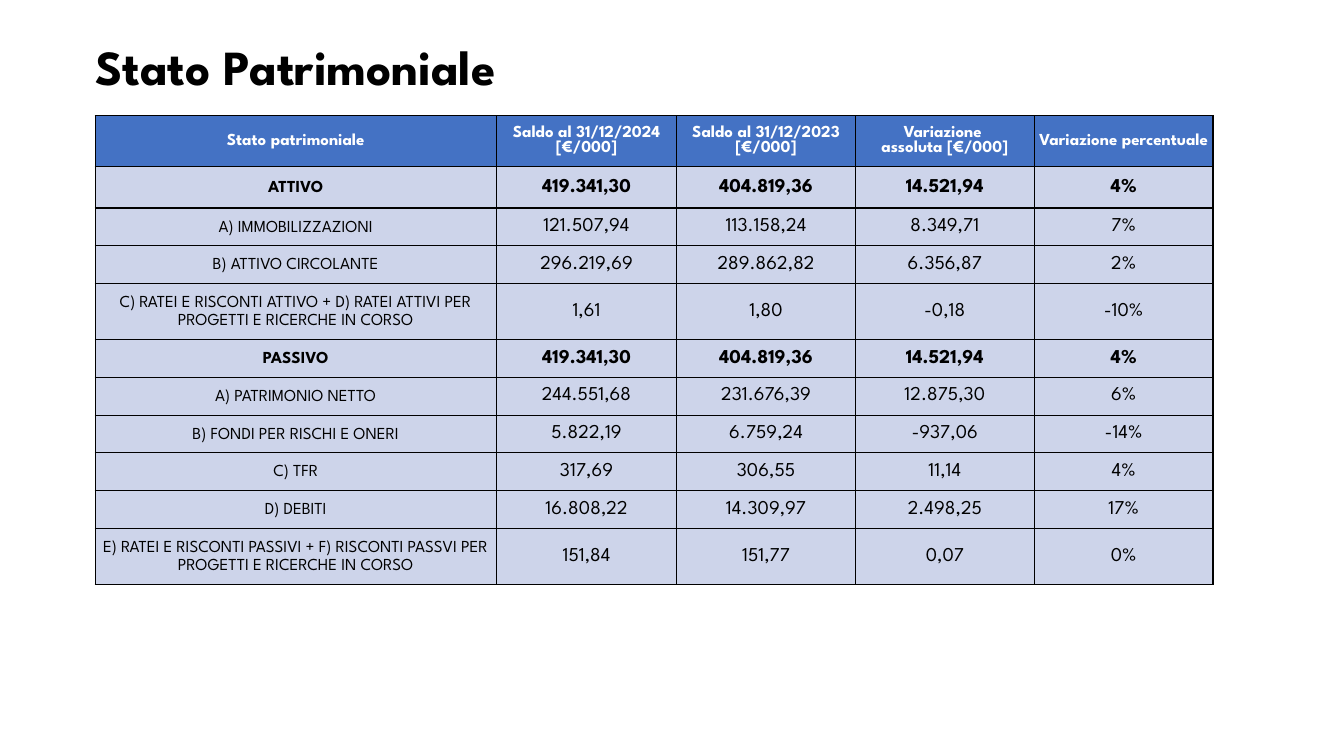
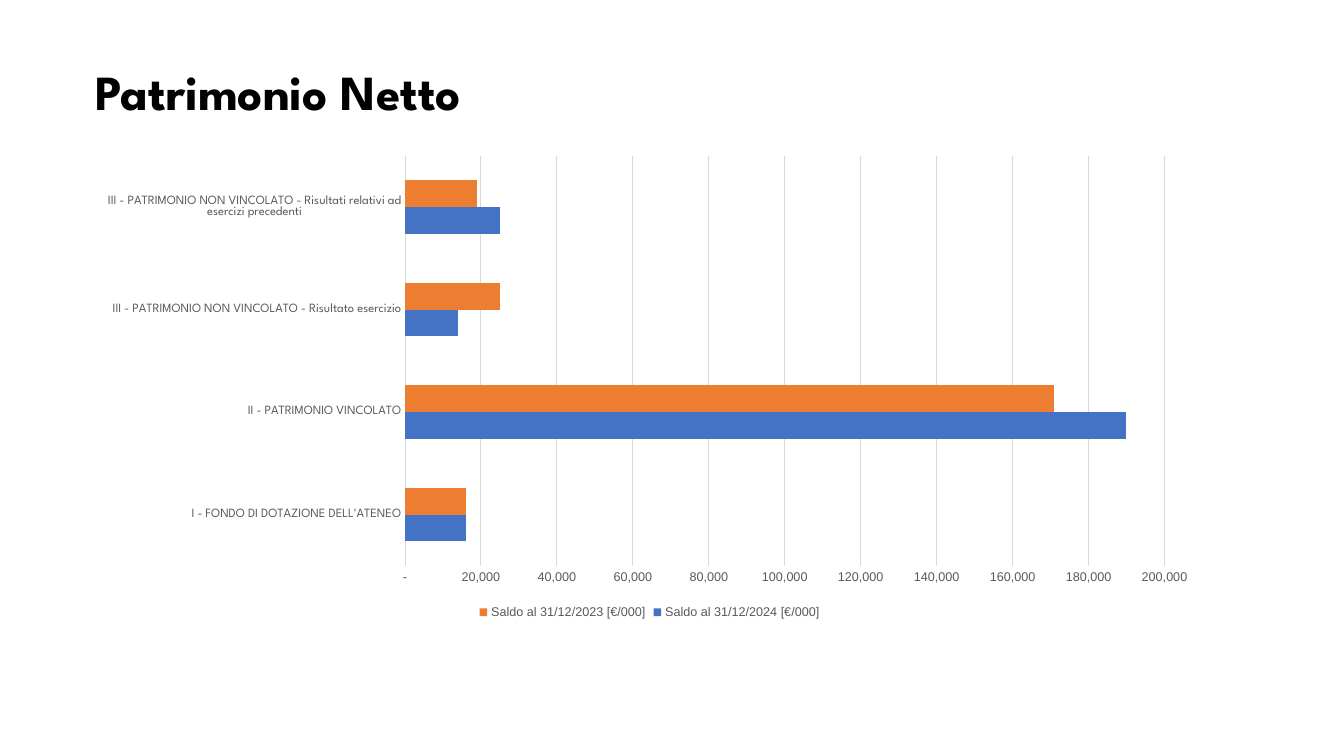
"""Build two balance sheet slides: a summary table and a bar chart of net assets."""
import dataclasses

import lxml.etree
import pptx
import pptx.chart.data
import pptx.dml.color
import pptx.enum.chart
import pptx.enum.text
import pptx.oxml.ns
import pptx.util

Pt = pptx.util.Pt
qn = pptx.oxml.ns.qn


@dataclasses.dataclass(frozen=True)
class Theme:
    """Colours, fonts and type sizes shared by the slides."""
    black: str = "000000"
    white: str = "FFFFFF"
    blue: str = "4472C4"
    pale_blue: str = "CDD4EA"
    orange: str = "ED7D31"
    grid: str = "D9D9D9"
    axis_text: str = "595959"
    display_font: str = "League Spartan"
    chart_font: str = "Arial"
    title_size: float = 35
    label_size: float = 12
    value_size: float = 14
    chart_size: float = 10
    axis_size: float = 9
    line_width: float = 0.75
    border_width: float = 0.94


THEME = Theme()

COLUMN_WIDTHS = [286.5, 129, 127.5, 128, 127.5]
HEADER_HEIGHT, FIRST_HEIGHT, ROW_HEIGHT, TALL_HEIGHT = 36.5, 29.5, 27, 40
HEADERS = [
    ["Stato patrimoniale"],
    ["Saldo al 31/12/2024 [€/000]"],
    ["Saldo al 31/12/2023 [€/000]"],
    ["Variazione ", "assoluta [€/000]"],
    ["Variazione percentuale"],
]
TOTALS = ("ATTIVO", "PASSIVO")
ROWS = [
    ("ATTIVO", "419.341,30", "404.819,36", "14.521,94", "4%"),
    ("A) IMMOBILIZZAZIONI", "121.507,94", "113.158,24", "8.349,71", "7%"),
    ("B) ATTIVO CIRCOLANTE", "296.219,69", "289.862,82", "6.356,87", "2%"),
    ("C) RATEI E RISCONTI ATTIVO + D) RATEI ATTIVI PER PROGETTI E RICERCHE IN CORSO",
     "1,61", "1,80", "-0,18", "-10%"),
    ("PASSIVO", "419.341,30", "404.819,36", "14.521,94", "4%"),
    ("A) PATRIMONIO NETTO", "244.551,68", "231.676,39", "12.875,30", "6%"),
    ("B) FONDI PER RISCHI E ONERI", "5.822,19", "6.759,24", "-937,06", "-14%"),
    ("C) TFR", "317,69", "306,55", "11,14", "4%"),
    ("D) DEBITI", "16.808,22", "14.309,97", "2.498,25", "17%"),
    ("E) RATEI E RISCONTI PASSIVI + F) RISCONTI PASSVI PER PROGETTI E RICERCHE IN CORSO",
     "151,84", "151,77", "0,07", "0%"),
]

CATEGORIES = [
    "I - FONDO DI DOTAZIONE DELL'ATENEO",
    "II - PATRIMONIO VINCOLATO",
    "III - PATRIMONIO NON VINCOLATO - Risultato esercizio",
    "III - PATRIMONIO NON VINCOLATO - Risultati relativi ad esercizi precedenti",
]
SERIES = [
    ("Saldo al 31/12/2024 [€/000]", (16000, 190000, 14000, 25000), THEME.blue),
    ("Saldo al 31/12/2023 [€/000]", (16000, 171000, 25000, 19000), THEME.orange),
]
NUMBER_FORMAT = r'_(* #,##0_);_(* \(#,##0\);_(* "-"_);_(@_)'
CHART_WIDTH, CHART_HEIGHT = 806, 340.5
PLOT_LAYOUT = {
    "x": 228.3 / CHART_WIDTH,
    "y": 6.4 / CHART_HEIGHT,
    "w": 542.5 / CHART_WIDTH,
    "h": 292.8 / CHART_HEIGHT,
}


def rgb(code):
    """Return the colour object for a hexadecimal code."""
    return pptx.dml.color.RGBColor.from_string(code)


def style_font(font, size, color, name=THEME.display_font, bold=False):
    """Set the face, size, colour and weight of a font."""
    font.name, font.size, font.bold = name, Pt(size), bold
    font.color.rgb = rgb(color)


def add_title(page, text, top):
    """Add the slide title at a given height."""
    box = page.shapes.add_textbox(Pt(61), Pt(top), Pt(839), Pt(78.5))
    box.text_frame.word_wrap = True
    para = box.text_frame.paragraphs[0]
    para.line_spacing = 0.9
    span = para.add_run()
    span.text = text
    style_font(span.font, THEME.title_size, THEME.black, bold=True)


def add_borders(cell):
    """Draw a thin black line on all four sides of a cell."""
    properties = cell._tc.get_or_add_tcPr()
    for side in ("a:lnL", "a:lnR", "a:lnT", "a:lnB"):
        line = lxml.etree.SubElement(properties, qn(side), w=str(int(Pt(THEME.border_width))))
        fill = lxml.etree.SubElement(line, qn("a:solidFill"))
        lxml.etree.SubElement(fill, qn("a:srgbClr"), val=THEME.black)


def fill_cell(cell, lines, fill, size, color, bold, margins, spacing=None):
    """Write centred lines in a bordered cell of one colour."""
    add_borders(cell)
    cell.fill.solid()
    cell.fill.fore_color.rgb = rgb(fill)
    cell.vertical_anchor = pptx.enum.text.MSO_ANCHOR.MIDDLE
    side, edge = margins
    cell.margin_left = cell.margin_right = Pt(side)
    cell.margin_top = cell.margin_bottom = Pt(edge)
    frame = cell.text_frame
    for index, line in enumerate(lines):
        para = frame.add_paragraph() if index else frame.paragraphs[0]
        para.alignment = pptx.enum.text.PP_ALIGN.CENTER
        if spacing:
            para.line_spacing = spacing
        span = para.add_run()
        span.text = line
        style_font(span.font, size, color, bold=bold)


def row_height(index, label):
    """Return the height of a body row."""
    if index == 0:
        return FIRST_HEIGHT
    return TALL_HEIGHT if "+" in label else ROW_HEIGHT


def add_balance_table(page):
    """Add the balance sheet table."""
    heights = [HEADER_HEIGHT] + [row_height(i, row[0]) for i, row in enumerate(ROWS)]
    table = page.shapes.add_table(
        len(heights), len(COLUMN_WIDTHS), Pt(68), Pt(82.6),
        Pt(sum(COLUMN_WIDTHS)), Pt(sum(heights))).table
    table.first_row = table.horz_banding = False
    for column, width in zip(table.columns, COLUMN_WIDTHS):
        column.width = Pt(width)
    for row, height in zip(table.rows, heights):
        row.height = Pt(height)

    label_margins, value_margins = (2, 2.5), (1.5, 0)
    for column, lines in enumerate(HEADERS):
        fill_cell(table.cell(0, column), lines, THEME.blue, THEME.label_size,
                  THEME.white, True, label_margins)
    for index, (label, *values) in enumerate(ROWS, 1):
        bold = label in TOTALS
        fill_cell(table.cell(index, 0), [label], THEME.pale_blue, THEME.label_size,
                  THEME.black, bold, label_margins, 1.15)
        for column, value in enumerate(values, 1):
            fill_cell(table.cell(index, column), [value], THEME.pale_blue,
                      THEME.value_size, THEME.black, bold, value_margins)


def style_line(line):
    """Give a chart line the pale grid look."""
    line.color.rgb = rgb(THEME.grid)
    line.width = Pt(THEME.line_width)


def style_axis(axis, font_name):
    """Remove the ticks of an axis and set its label font."""
    axis.major_tick_mark = axis.minor_tick_mark = pptx.enum.chart.XL_TICK_MARK.NONE
    style_font(axis.tick_labels.font, THEME.axis_size, THEME.axis_text, font_name)


def place_plot(chart):
    """Fix the inner plot area as fractions of the chart."""
    area = chart.element.find(".//" + qn("c:plotArea"))
    for layout in area.findall(qn("c:layout")):
        area.remove(layout)
    layout = lxml.etree.Element(qn("c:layout"))
    area.insert(0, layout)
    manual = lxml.etree.SubElement(layout, qn("c:manualLayout"))
    settings = {"layoutTarget": "inner", "xMode": "edge", "yMode": "edge", **PLOT_LAYOUT}
    for name, value in settings.items():
        lxml.etree.SubElement(manual, qn("c:" + name), val=str(value))


def add_assets_chart(page):
    """Add the clustered bar chart of net assets."""
    data = pptx.chart.data.CategoryChartData(number_format=NUMBER_FORMAT)
    data.categories = CATEGORIES
    for name, values, _ in SERIES:
        data.add_series(name, values)
    chart = page.shapes.add_chart(
        pptx.enum.chart.XL_CHART_TYPE.BAR_CLUSTERED,
        Pt(61), Pt(105), Pt(CHART_WIDTH), Pt(CHART_HEIGHT), data).chart
    chart.has_title = False
    style_font(chart.font, THEME.chart_size, THEME.black, THEME.chart_font)

    plot = chart.plots[0]
    plot.gap_width, plot.overlap, plot.vary_by_categories = 182, 0, False
    for series, (_, _, color) in zip(plot.series, SERIES):
        series.format.fill.solid()
        series.format.fill.fore_color.rgb = rgb(color)

    style_axis(chart.category_axis, THEME.display_font)
    style_line(chart.category_axis.format.line)
    amounts = chart.value_axis
    style_axis(amounts, THEME.chart_font)
    amounts.minimum_scale, amounts.maximum_scale, amounts.major_unit = 0, 200000, 20000
    amounts.tick_labels.number_format = NUMBER_FORMAT
    amounts.tick_labels.number_format_is_linked = False
    amounts.format.line.fill.background()
    style_line(amounts.major_gridlines.format.line)

    chart.has_legend = True
    chart.legend.position = pptx.enum.chart.XL_LEGEND_POSITION.BOTTOM
    chart.legend.include_in_layout = False
    style_font(chart.legend.font, THEME.axis_size, THEME.axis_text, THEME.chart_font)
    place_plot(chart)


def main():
    """Build and save the deck."""
    deck = pptx.Presentation()
    deck.slide_width, deck.slide_height = Pt(960), Pt(540)
    slides = [
        ("Stato Patrimoniale", 27.4, add_balance_table),
        ("Patrimonio Netto", 45, add_assets_chart),
    ]
    for title, top, add_content in slides:
        page = deck.slides.add_slide(deck.slide_layouts[6])
        add_title(page, title, top)
        add_content(page)
    deck.save("out.pptx")


if __name__ == "__main__":
    main()
